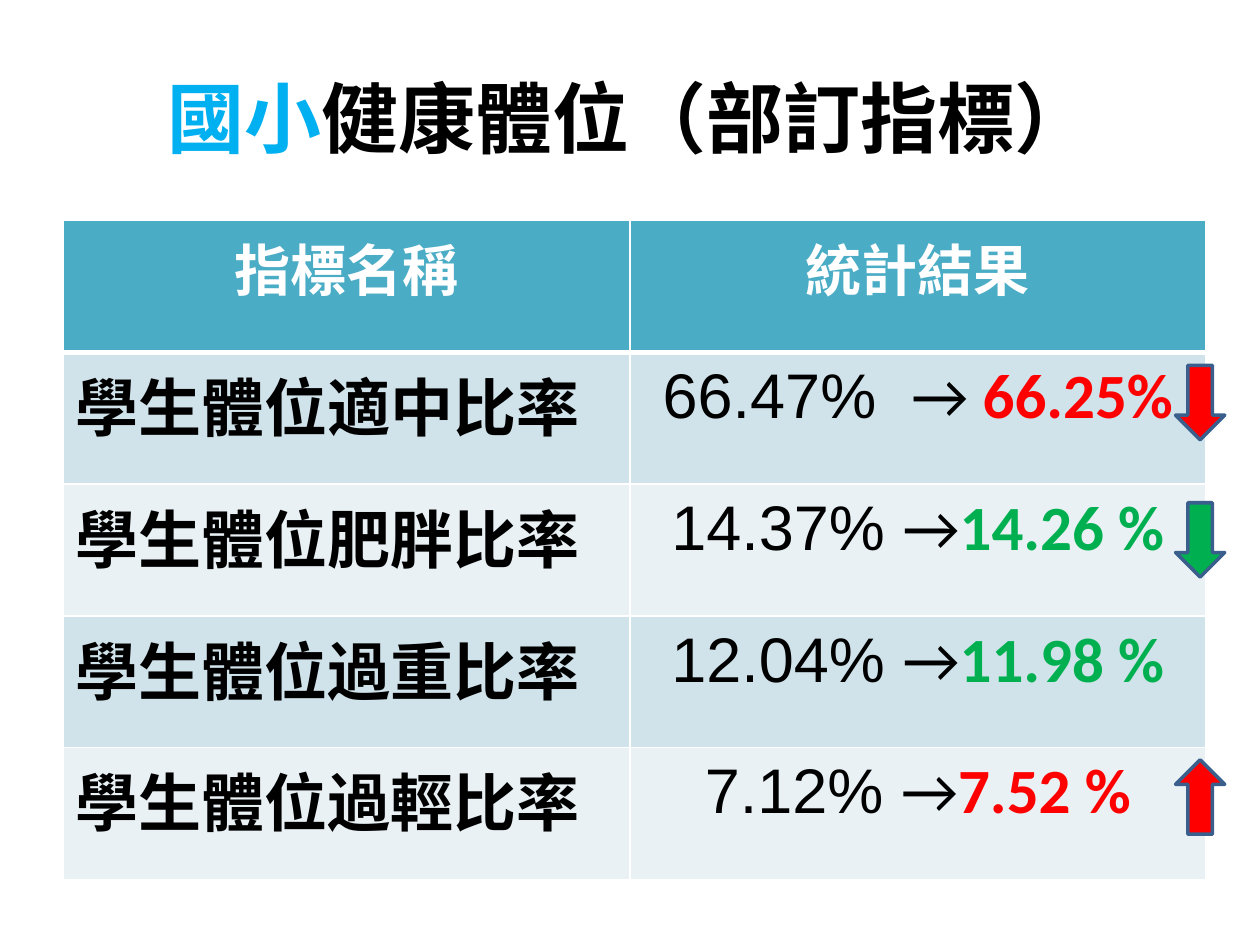
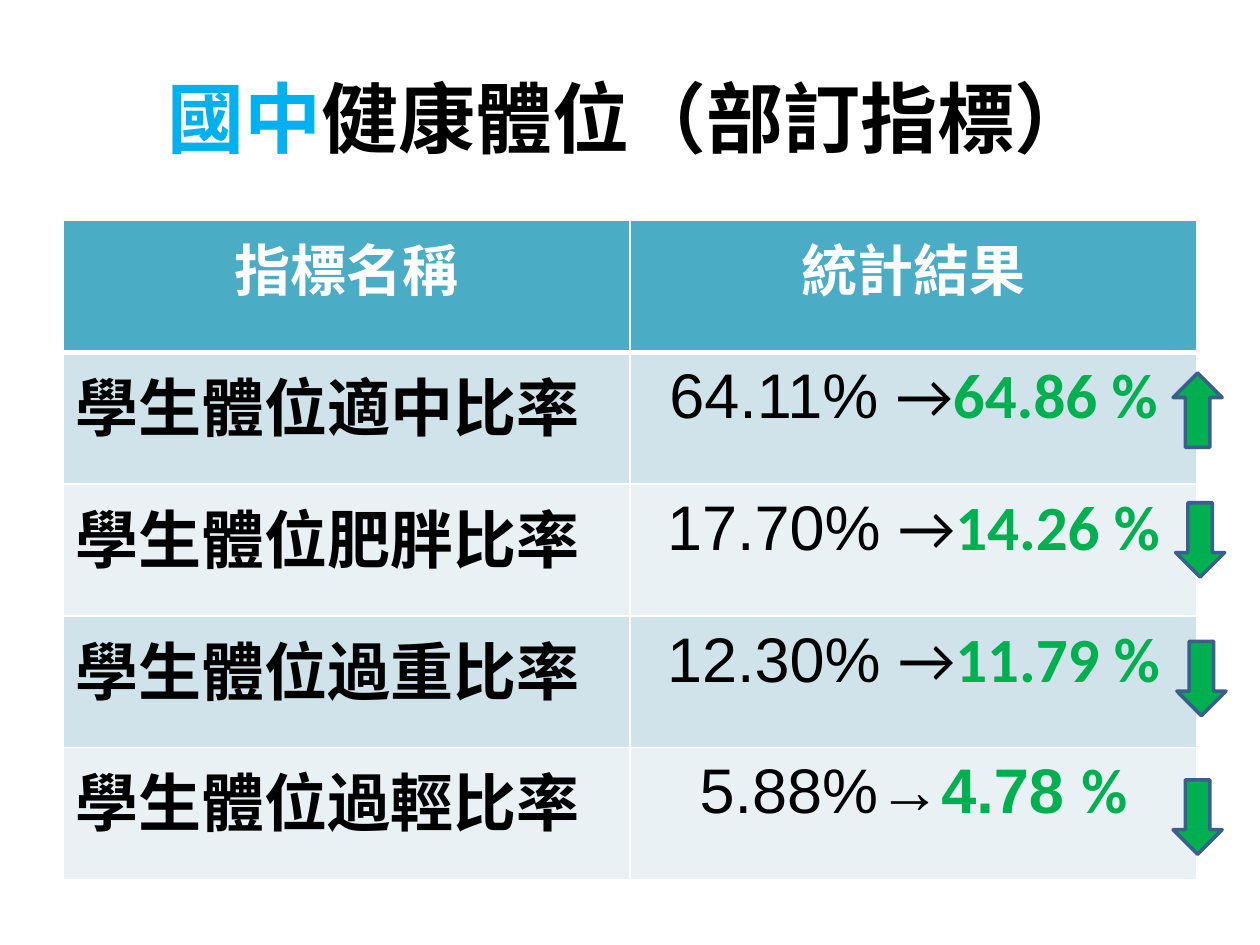
from lxml import etree
from pptx import Presentation
from pptx.dml.color import RGBColor
from pptx.enum import shapes, text
from pptx.oxml.ns import qn
from pptx.util import Inches, Pt

COLORS = {
    "level": "00B0F0", "ink": "000000", "white": "FFFFFF", "header": "4BACC6",
    "band_dark": "D0E3EA", "band_light": "E9F1F5",
    "worse": "FF0000", "better": "00B050", "outline": "3A5F8C",
}
CJK, LATIN, PLAIN = "Noto Sans CJK SC", "Calibri", "Arial"
HEADINGS = ["指標名稱", "統計結果"]
INDICATORS = [f"學生體位{name}比率" for name in ("適中", "肥胖", "過重", "過輕")]
UP, DOWN = shapes.MSO_SHAPE.UP_ARROW, shapes.MSO_SHAPE.DOWN_ARROW


def change(before, arrow, after, color):
    return [(before, PLAIN, "ink", False), (arrow, LATIN, "ink", False), (after, LATIN, color, True)]


LEVELS = [
    {
        "name": "國小",
        "result_width": 4.57,
        "results": [
            change("66.47%  ", "→ ", "66.25%", "worse"),
            change("14.37% ", "→", "14.26 %", "better"),
            change("12.04% ", "→", "11.98 %", "better"),
            change("7.12% ", "→", "7.52 %", "worse"),
        ],
        "trends": [(DOWN, 9.33, 2.9, "worse"), (DOWN, 9.33, 3.99, "better"), (UP, 9.33, 6.03, "worse")],
    },
    {
        "name": "國中",
        "result_width": 4.5,
        "results": [
            change("64.11% ", "→", "64.86 %", "better"),
            change("17.70% ", "→", "14.26 %", "better"),
            change("12.30% ", "→", "11.79 %", "better"),
            [("5.88%→", PLAIN, "ink", False), ("4.78 ", PLAIN, "better", True),
             ("%", LATIN, "better", True)],
        ],
        "trends": [(DOWN, 9.33, 3.99, "better"), (DOWN, 9.34, 5.09, "better"),
                   (DOWN, 9.31, 6.19, "better"), (UP, 9.31, 2.96, "better")],
    },
]


def rgb(name):
    return RGBColor.from_string(COLORS[name])


def write(paragraph, runs, size, centred=True):
    paragraph.alignment = text.PP_ALIGN.CENTER if centred else text.PP_ALIGN.LEFT
    paragraph.font.size = Pt(size)
    for words, face, color, bold in runs:
        run = paragraph.add_run()
        run.text = words
        run.font.size = Pt(size)
        run.font.name = face
        run.font.bold = bold
        run.font.color.rgb = rgb(color)
        if face == CJK:
            east_asian = etree.SubElement(run.font._element, qn("a:ea"))
            east_asian.set("typeface", CJK)


def add_title(slide, level):
    frame = slide.shapes.add_textbox(Inches(0.5), Inches(0.3), Inches(9), Inches(1.25)).text_frame
    frame.word_wrap = True
    frame.vertical_anchor = text.MSO_ANCHOR.MIDDLE
    write(frame.paragraphs[0],
          [(level, LATIN, "level", True), ("健康體位（部訂指標）", LATIN, "ink", True)], 44)


def set_borders(cell, top, bottom):
    properties = cell._tc.get_or_add_tcPr()
    widths = {"lnL": 1, "lnR": 1, "lnT": top, "lnB": bottom}
    for position, (side, width) in enumerate(widths.items()):
        line = etree.Element(qn(f"a:{side}"), w=str(Pt(width)))
        fill = etree.SubElement(line, qn("a:solidFill"))
        etree.SubElement(fill, qn("a:srgbClr"), val=COLORS["white"])
        properties.insert(position, line)


def style_cell(cell, row):
    cell.fill.solid()
    band = "header" if row == 0 else "band_dark" if row % 2 else "band_light"
    cell.fill.fore_color.rgb = rgb(band)
    set_borders(cell, 3 if row == 1 else 1, 3 if row == 0 else 1)


def add_indicator_table(slide, results, result_width):
    row_count = len(INDICATORS) + 1
    table = slide.shapes.add_table(row_count, 2, Inches(0.5), Inches(1.75),
                                   Inches(4.5 + result_width), Inches(5.23)).table
    table.columns[0].width = Inches(4.5)
    table.columns[1].width = Inches(result_width)
    for row in range(row_count):
        for column in range(2):
            style_cell(table.cell(row, column), row)
    for column, heading in enumerate(HEADINGS):
        write(table.cell(0, column).text_frame.paragraphs[0], [(heading, CJK, "white", True)], 32)
    for row, (indicator, result) in enumerate(zip(INDICATORS, results), 1):
        write(table.cell(row, 0).text_frame.paragraphs[0], [(indicator, CJK, "ink", True)], 36, False)
        write(table.cell(row, 1).text_frame.paragraphs[0], result, 36)


def add_trend(slide, direction, left, top, color):
    trend = slide.shapes.add_shape(direction, Inches(left), Inches(top), Inches(0.39), Inches(0.59))
    trend.shadow.inherit = False
    trend.fill.solid()
    trend.fill.fore_color.rgb = rgb(color)
    trend.line.color.rgb = rgb("outline")
    trend.line.width = Pt(2)


def main():
    deck = Presentation()
    deck.slide_width, deck.slide_height = Inches(10), Inches(7.5)
    for level in LEVELS:
        slide = deck.slides.add_slide(deck.slide_layouts[6])
        add_title(slide, level["name"])
        add_indicator_table(slide, level["results"], level["result_width"])
        for trend in level["trends"]:
            add_trend(slide, *trend)
    deck.save("out.pptx")


if __name__ == "__main__":
    main()
